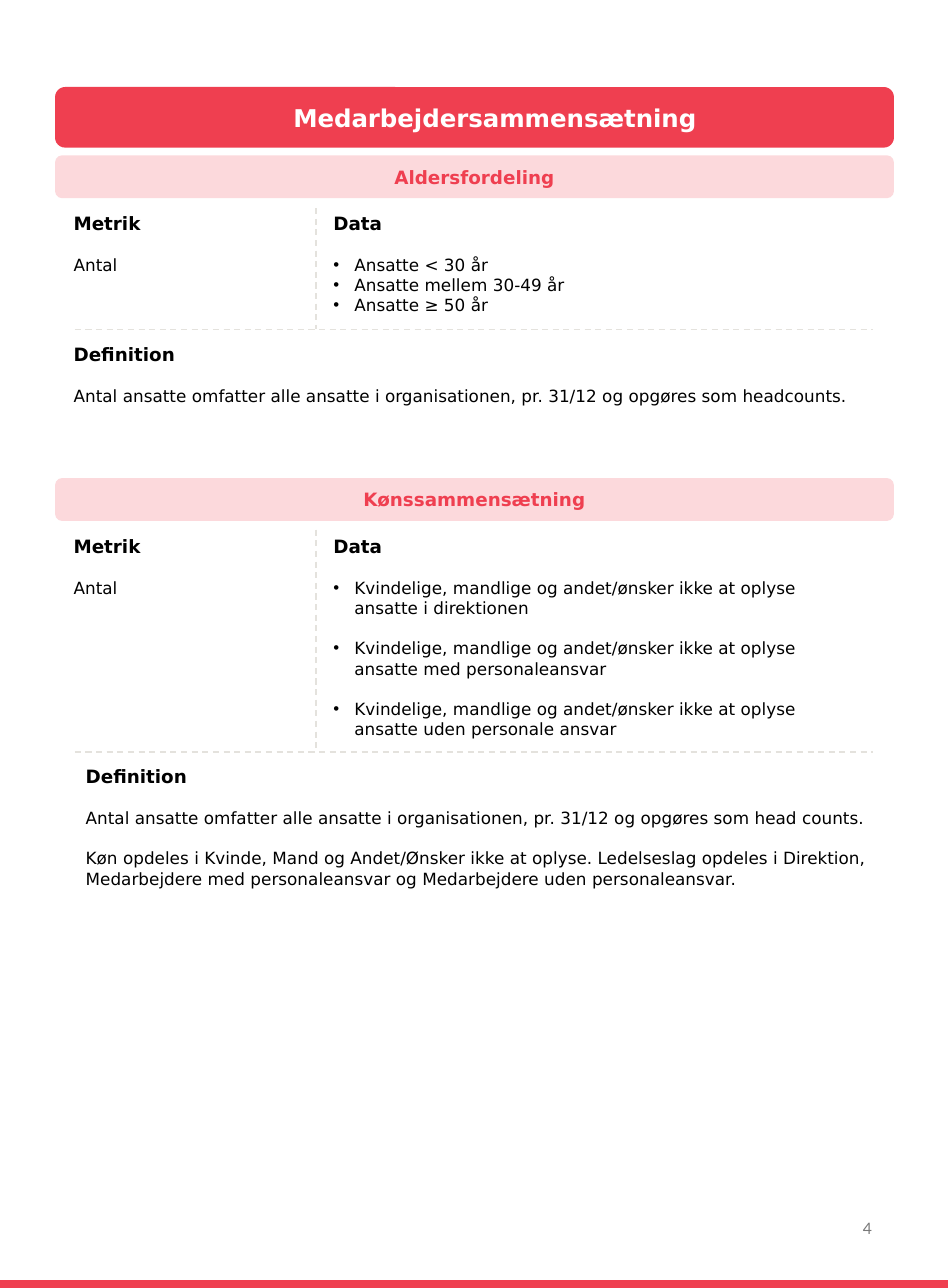
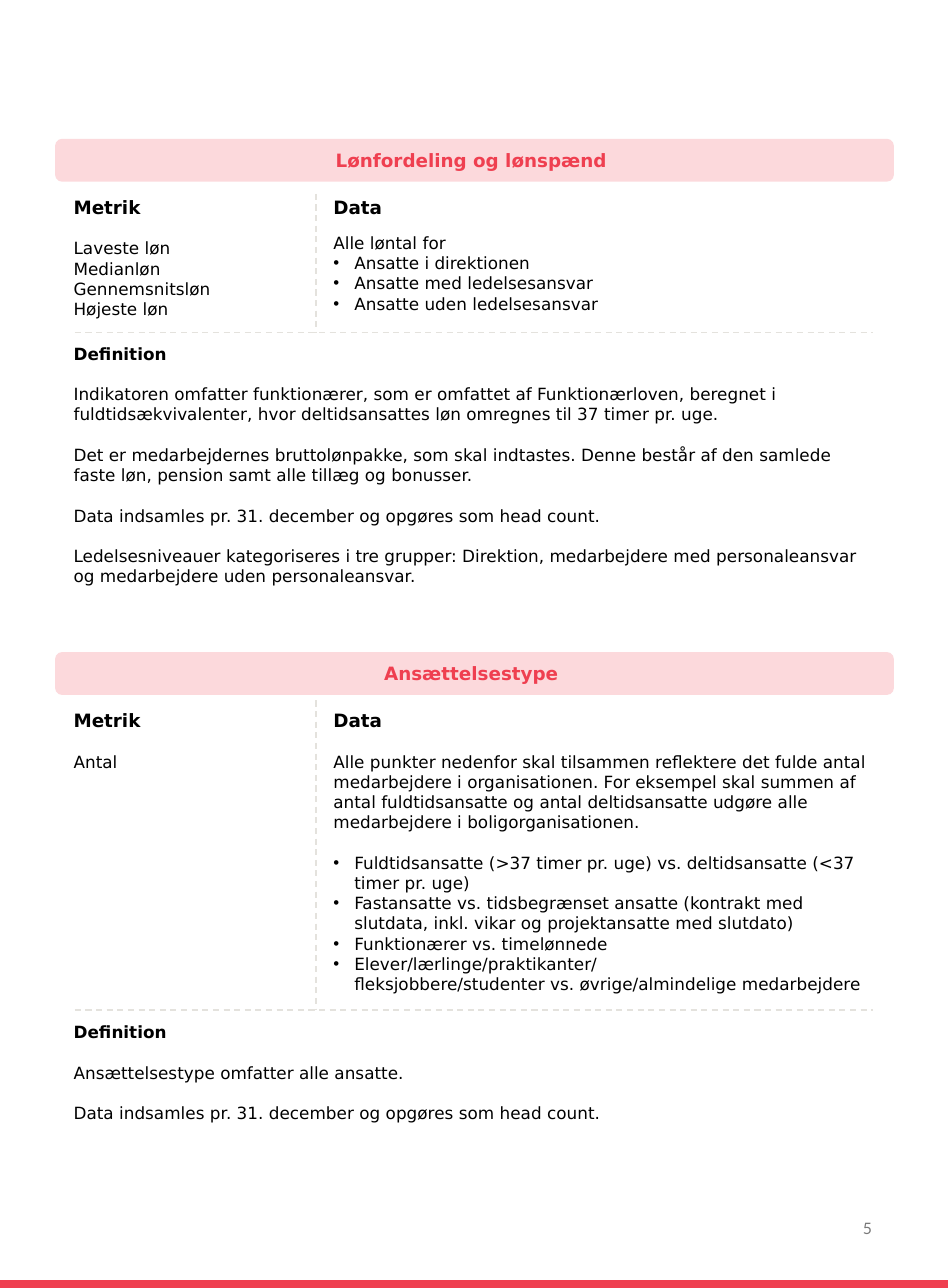
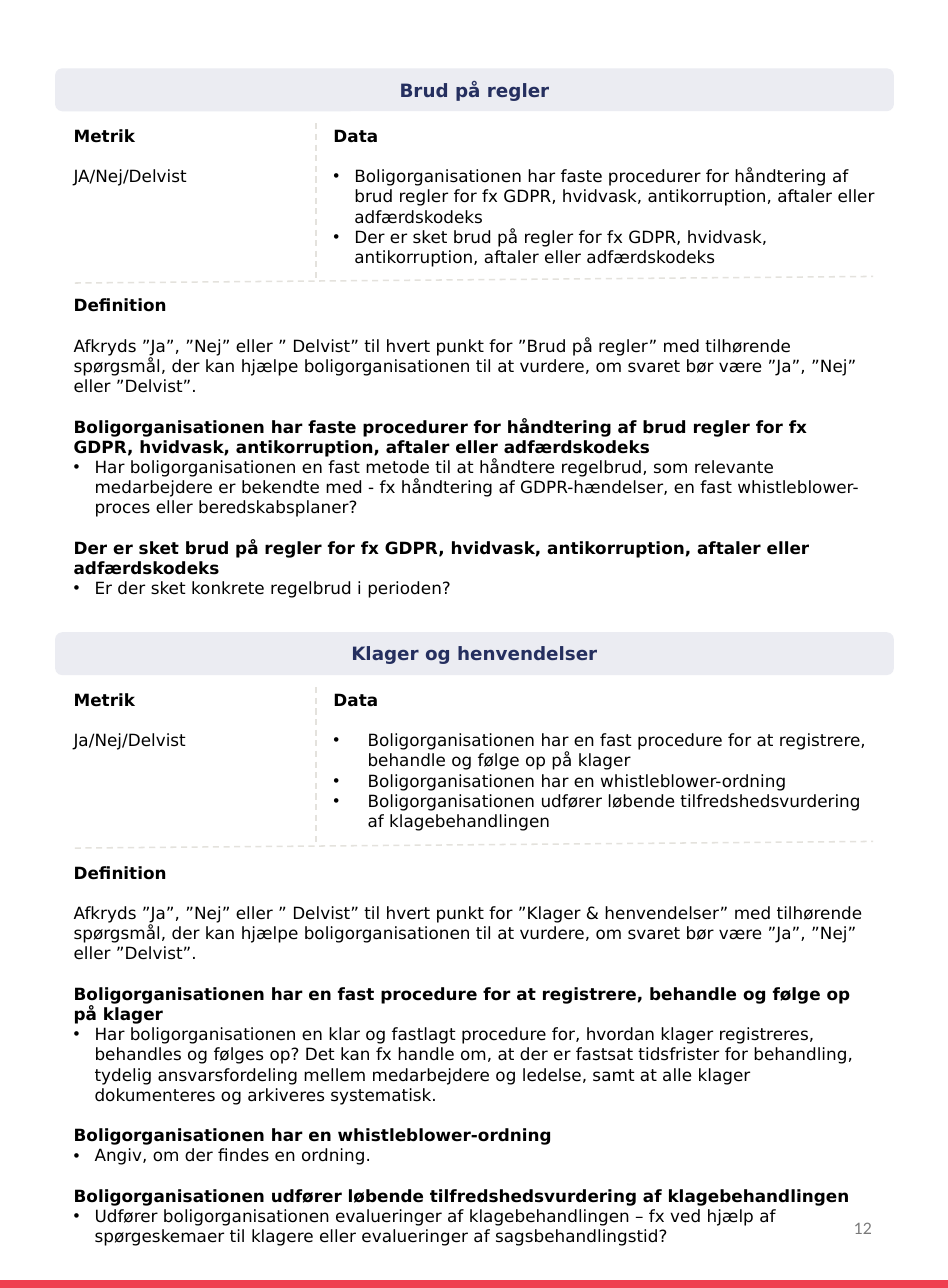
from dataclasses import dataclass

from lxml import etree
from pptx import Presentation
from pptx import util as u
from pptx.dml.color import RGBColor
from pptx.enum import dml, shapes, text
from pptx.oxml.ns import qn


@dataclass(frozen=True)
class Theme:
    """Colours, fonts and type sizes (points)."""
    red: str = "EF3F50"
    rose: str = "FCD9DC"
    navy: str = "252F5F"
    mist: str = "EBECF2"
    rule: str = "E4E2DD"
    ink: str = "000000"
    white: str = "FFFFFF"
    grey: str = "797979"
    font: str = "DejaVu Sans"
    foot: str = "Lato"
    title: float = 16
    head: float = 12
    body: float = 11
    page: float = 10.3
    lead: float = 1.2
    gap: float = 13.2
    tight: float = 9.6


T = Theme()
WARM = (T.rose, T.red)
COOL = (T.mist, T.navy)

# Page size in points, then the grid in inches
WIDE, TALL = u.Pt(620), u.Pt(842)
W, H = WIDE.inches, TALL.inches
EDGE, SPAN = 0.5, 7.62      # header bands
COL1, COL2 = 0.57, 2.93     # text columns
STEM = 2.87                 # divider between the columns
RULE = (0.68, 7.93)         # ends of the cross rule
RIGHT = 8.02                # right edge of the text
BAND, ROW = 0.39, 0.47      # band height, band top to text row
PAD = 0.08                  # text row to cross rule


def rgb(code):
    return RGBColor.from_string(code)


def inch(*sizes):
    return [u.Inches(s) for s in sizes]


# --- Text ---------------------------------------------------------------

def write(frame, words, size=T.body, bold=False, color=T.ink, font=T.font,
          align=text.PP_ALIGN.LEFT, gap=0, indent=0):
    """Add one paragraph; an indent gives it a bullet."""
    first = frame.paragraphs[0]
    para = frame.add_paragraph() if first.runs else first
    para.text = words
    para.alignment = align
    para.line_spacing = u.Pt(round(size * T.lead, 1))
    if gap:
        para.space_before = u.Pt(gap)
    if indent:
        prop = para._p.get_or_add_pPr()
        prop.set("marL", str(u.Inches(indent)))
        prop.set("indent", str(-u.Inches(indent)))
        etree.SubElement(prop, qn("a:buFont")).set("typeface", "Arial")
        etree.SubElement(prop, qn("a:buChar")).set("char", "•")
    for run in para.runs:
        run.font.size = u.Pt(size)
        run.font.bold = bold
        run.font.name = font
        run.font.color.rgb = rgb(color)


def item(words, **form):
    return words, form


def dot(words, indent=0.19, **form):
    return item(words, indent=indent, **form)


def block(slide, box, head, size, items):
    """A bold heading, one line of space, then the items."""
    frame = slide.shapes.add_textbox(*inch(*box)).text_frame
    frame.word_wrap = True
    frame.auto_size = text.MSO_AUTO_SIZE.SHAPE_TO_FIT_TEXT
    write(frame, head, size=size, bold=True)
    for n, (words, form) in enumerate(items):
        write(frame, words, **({"gap": T.gap, **form} if n == 0 else form))


# --- Shapes -------------------------------------------------------------

def panel(slide, kind, box, fill):
    shape = slide.shapes.add_shape(kind, *inch(*box))
    shape.shadow.inherit = False
    shape.fill.solid()
    shape.fill.fore_color.rgb = rgb(fill)
    shape.line.fill.background()
    return shape


def band(slide, top, tall, words, fill, color, size=T.head, left=0.1):
    """A rounded bar with a centred heading."""
    kind = shapes.MSO_SHAPE.ROUNDED_RECTANGLE
    frame = panel(slide, kind, (EDGE, top, SPAN, tall), fill).text_frame
    frame.word_wrap = True
    frame.vertical_anchor = text.MSO_ANCHOR.MIDDLE
    frame.margin_left = u.Inches(left)
    write(frame, words, size=size, bold=True, color=color,
          align=text.PP_ALIGN.CENTER)


def dash(slide, *ends):
    line = slide.shapes.add_connector(
        shapes.MSO_CONNECTOR.STRAIGHT, *inch(*ends))
    line.line.color.rgb = rgb(T.rule)
    line.line.width = u.Pt(1)
    line.line.dash_style = dml.MSO_LINE.DASH
    etree.SubElement(line._element.spPr, qn("a:effectLst"))


# --- Page parts ---------------------------------------------------------

def page(deck, number):
    """A blank slide with the bottom strip and the page number."""
    slide = deck.slides.add_slide(deck.slide_layouts[6])
    panel(slide, shapes.MSO_SHAPE.RECTANGLE, (0, H - 0.07, W, 0.07), T.red)
    frame = slide.shapes.add_textbox(
        *inch(6.08, 10.84, 1.94, 0.62)).text_frame
    frame.word_wrap = True
    frame.vertical_anchor = text.MSO_ANCHOR.MIDDLE
    write(frame, str(number), size=T.page, font=T.foot, color=T.grey,
          align=text.PP_ALIGN.RIGHT)
    return slide


def topic(slide, title, rows, metric, data, note, tone=WARM, wide=5.19,
          tall=1, left=COL1, heads=(T.body, T.body), tilt=0):
    """Band, metric and data columns, cross rule and definition.

    rows holds the tops of band, divider, cross rule and definition.
    """
    top, stem, rule, base = rows
    row = top + ROW
    size, last = heads
    band(slide, top, BAND, title, *tone)
    lines = (size + T.body * (len(metric) + 1)) * T.lead / 72
    block(slide, (COL1, row, STEM - COL1, 0.1 + lines), "Metrik", size,
          [item(m) for m in metric])
    block(slide, (COL2, row, wide, rule - row - PAD), "Data", size, data)
    dash(slide, STEM, stem, STEM, rule - tilt / 2)
    dash(slide, RULE[0], rule, RULE[1], rule - tilt)
    block(slide, (left, base, RIGHT - left, tall), "Definition", last, note)


def check(slide, title, name, rows, metric, claims, indent, tall):
    """A yes/no topic: every claim is listed, then explained."""
    note = [item(
        f"Afkryds ”Ja”, ”Nej” eller ” Delvist” til hvert punkt for ”{name}” "
        "med tilhørende spørgsmål, der kan hjælpe boligorganisationen til at "
        "vurdere, om svaret bør være ”Ja”, ”Nej” eller ”Delvist”.")]
    for claim, query in claims:
        note += [item(claim, bold=True, gap=T.gap), dot(query)]
    topic(slide, title, rows, [metric],
          [dot(claim, indent) for claim, _ in claims], note,
          tone=COOL, tall=tall, tilt=0.06)


# --- Slides -------------------------------------------------------------

def staff(deck):
    slide = page(deck, 4)
    band(slide, 0.79, 0.55, "Medarbejdersammensætning", T.red, T.white,
         size=T.title, left=0.47)
    heads = (T.head, T.head)
    count = ("Antal ansatte omfatter alle ansatte i organisationen, "
             "pr. 31/12 og opgøres som ")
    topic(slide, "Aldersfordeling", (1.41, 1.89, 2.99, 3.07), ["Antal"],
          [dot(f"Ansatte {age} år") for age in ("< 30", "mellem 30-49", "≥ 50")],
          [item(count + "headcounts.")], wide=5.01, tall=0.67, heads=heads)
    roles = ("i direktionen", "med personaleansvar", "uden personale ansvar")
    topic(slide, "Kønssammensætning", (4.34, 4.81, 6.83, 6.9), ["Antal"],
          [dot("Kvindelige, mandlige og andet/ønsker ikke at oplyse ansatte "
               + role, gap=T.gap) for role in roles],
          [item(count + "head counts."),
           item("Køn opdeles i Kvinde, Mand og Andet/Ønsker ikke at oplyse. "
                "Ledelseslag opdeles i Direktion, Medarbejdere med "
                "personaleansvar og Medarbejdere uden personaleansvar.",
                gap=T.gap)],
          wide=4.98, tall=1.23, left=0.68, heads=heads)


def pay(deck):
    slide = page(deck, 5)
    heads = (T.head, T.body)
    date = item("Data indsamles pr. 31. december og opgøres som head count.",
                gap=T.gap)
    topic(slide, "Lønfordeling og lønspænd ", (1.26, 1.76, 3.02, 3.07),
          ["Laveste løn", "Medianløn", "Gennemsnitsløn", "Højeste løn"],
          [item("Alle løntal for", gap=T.tight),
           dot("Ansatte i direktionen"),
           dot("Ansatte med ledelsesansvar"),
           dot("Ansatte uden ledelsesansvar")],
          [item("Indikatoren omfatter funktionærer, som er omfattet af "
                "Funktionærloven, beregnet i fuldtidsækvivalenter, hvor "
                "deltidsansattes løn omregnes til 37 timer pr. uge."),
           item("Det er medarbejdernes bruttolønpakke, som skal indtastes. "
                "Denne består af den samlede faste løn, pension samt alle "
                "tillæg og bonusser.", gap=T.gap),
           date,
           item("Ledelsesniveauer kategoriseres i tre grupper: Direktion, "
                "medarbejdere med personaleansvar og medarbejdere uden "
                "personaleansvar.", gap=T.gap)],
          wide=4.78, tall=2.32, heads=heads)
    topic(slide, "Ansættelsestype ", (5.92, 6.36, 9.17, 9.23), ["Antal"],
          [item("Alle punkter nedenfor skal tilsammen reflektere det fulde "
                "antal medarbejdere i organisationen. For eksempel skal "
                "summen af antal fuldtidsansatte og antal deltidsansatte "
                "udgøre alle medarbejdere i boligorganisationen."),
           dot("Fuldtidsansatte (>37 timer pr. uge) vs. deltidsansatte "
               "(<37 timer pr. uge)", gap=T.gap),
           dot("Fastansatte vs. tidsbegrænset ansatte (kontrakt med "
               "slutdata, inkl. vikar og projektansatte med slutdato)"),
           dot("Funktionærer vs. timelønnede"),
           dot("Elever/lærlinge/praktikanter/\n"
               "fleksjobbere/studenter vs. øvrige/almindelige medarbejdere")],
          [item("Ansættelsestype omfatter alle ansatte."), date],
          wide=5.11, tall=1.03, heads=heads)


def rules(deck):
    slide = page(deck, 12)
    check(slide, "Brud på regler", "Brud på regler",
          (0.62, 1.12, 2.57, 2.63), "JA/Nej/Delvist",
          [("Boligorganisationen har faste procedurer for håndtering af brud "
            "regler for fx GDPR, hvidvask, antikorruption, aftaler eller "
            "adfærdskodeks",
            "Har boligorganisationen en fast metode til at håndtere "
            "regelbrud, som relevante medarbejdere er bekendte med - fx "
            "håndtering af GDPR-hændelser, en fast whistleblower-proces "
            "eller beredskabsplaner?"),
           ("Der er sket brud på regler for fx GDPR, hvidvask, "
            "antikorruption, aftaler eller adfærdskodeks",
            "Er der sket konkrete regelbrud i perioden?")],
          indent=0.19, tall=2.88)
    check(slide, "Klager og henvendelser", "Klager & henvendelser",
          (5.74, 6.24, 7.7, 7.78), "Ja/Nej/Delvist",
          [("Boligorganisationen har en fast procedure for at registrere, "
            "behandle og følge op på klager",
            "Har boligorganisationen en klar og fastlagt procedure for, "
            "hvordan klager registreres, behandles og følges op? Det kan fx "
            "handle om, at der er fastsat tidsfrister for behandling, "
            "tydelig ansvarsfordeling mellem medarbejdere og ledelse, samt "
            "at alle klager dokumenteres og arkiveres systematisk."),
           ("Boligorganisationen har en whistleblower-ordning",
            "Angiv, om der findes en ordning."),
           ("Boligorganisationen udfører løbende tilfredshedsvurdering af "
            "klagebehandlingen",
            "Udfører boligorganisationen evalueringer af klagebehandlingen "
            "– fx ved hjælp af spørgeskemaer til klagere eller evalueringer "
            "af sagsbehandlingstid?")],
          indent=0.31, tall=3.62)


def main():
    deck = Presentation()
    deck.slide_width = WIDE
    deck.slide_height = TALL
    for build in (staff, pay, rules):
        build(deck)
    deck.save("out.pptx")


if __name__ == "__main__":
    main()
